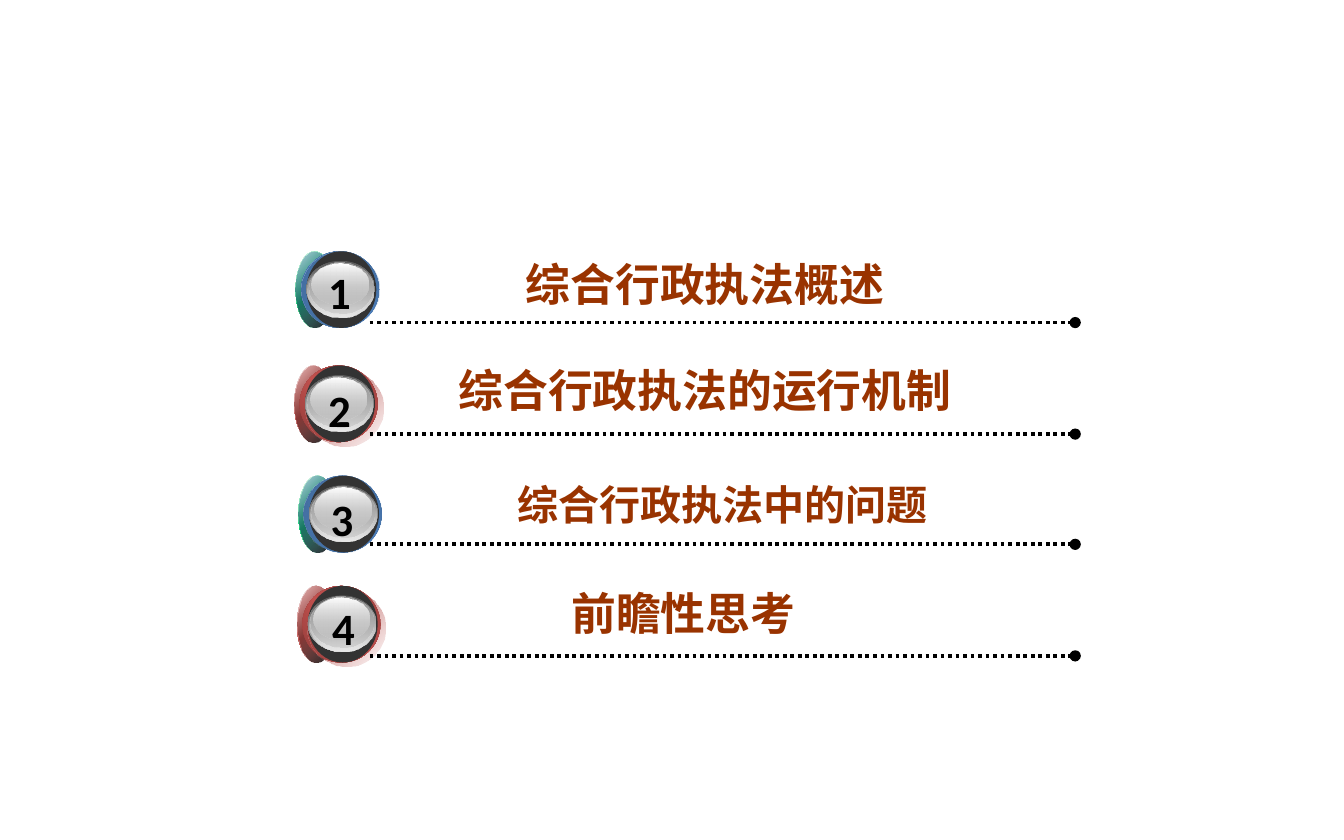
from dataclasses import dataclass

from lxml import etree
from pptx import Presentation
from pptx.dml.color import RGBColor
from pptx.enum.dml import MSO_LINE
from pptx.enum.shapes import MSO_CONNECTOR, MSO_SHAPE
from pptx.enum.text import MSO_AUTO_SIZE, PP_ALIGN
from pptx.oxml.ns import qn
from pptx.util import Inches, Pt

OVAL = MSO_SHAPE.OVAL
STRAIGHT = MSO_CONNECTOR.STRAIGHT
DOTTED = MSO_LINE.ROUND_DOT
CENTER = PP_ALIGN.CENTER
FIT_SHAPE = MSO_AUTO_SIZE.SHAPE_TO_FIT_TEXT


@dataclass(frozen=True)
class Accent:
    glow: str
    base: str
    rim: str
    halo: str
    halo_shift: tuple


@dataclass(frozen=True)
class Theme:
    heading_font: str = "Noto Sans CJK SC"
    number_font: str = "Calibri"
    heading: str = "993300"
    ink: str = "000000"
    white: str = "FFFFFF"
    ring: str = "333333"
    shade: str = "595959"
    mid: str = "989898"
    silver: str = "C0C0C0"
    light: str = "E9E9E9"
    size: int = 24
    small_size: int = 22
    line_width: int = 2
    cool: Accent = Accent("00CC66", "4F81BD", "3C6391", "416A9B", (0.04, 0))
    warm: Accent = Accent("C0504D", "C0504D", "933D3B", "9E423F", (0.08, 0.03))


class AgendaSlide:
    def __init__(self, slide, theme):
        self.s = slide
        self.theme = theme

    def oval(self, shapes, left, top, width, height, stops, angle=90):
        sp = shapes.add_shape(OVAL, Inches(left), Inches(top), Inches(width), Inches(height))
        sp.shadow.inherit = False
        sp.line.fill.background()
        if isinstance(stops, str):
            sp.fill.solid()
            sp.fill.fore_color.rgb = RGBColor.from_string(stops)
            return
        grad = etree.Element(qn("a:gradFill"), rotWithShape="1")
        stop_list = etree.SubElement(grad, qn("a:gsLst"))
        for position, color, opacity in stops:
            stop = etree.SubElement(stop_list, qn("a:gs"), pos=str(position * 1000))
            rgb = etree.SubElement(stop, qn("a:srgbClr"), val=color)
            if opacity < 100:
                etree.SubElement(rgb, qn("a:alpha"), val=str(opacity * 1000))
        etree.SubElement(grad, qn("a:lin"), ang=str(angle * 60000), scaled="1")
        sp._element.spPr.find(qn("a:prstGeom")).addnext(grad)

    def text(self, shapes, left, top, width, height, content, font, size, color):
        sp = shapes.add_textbox(Inches(left), Inches(top), Inches(width), Inches(height))
        tf = sp.text_frame
        tf.word_wrap = False
        tf.auto_size = FIT_SHAPE
        p = tf.paragraphs[0]
        p.text = content
        p.alignment = CENTER
        p.font.name = font
        p.font.size = Pt(size)
        p.font.bold = True
        p.font.color.rgb = RGBColor.from_string(color)
        latin = p._p.pPr.find(qn("a:defRPr")).find(qn("a:latin"))
        latin.addnext(etree.Element(qn("a:ea"), typeface=font))

    def rule(self, shapes, left, right, y):
        line = shapes.add_connector(STRAIGHT, Inches(left), Inches(y), Inches(right), Inches(y))
        line.line.color.rgb = RGBColor.from_string(self.theme.ink)
        line.line.width = Pt(self.theme.line_width)
        line.line.dash_style = DOTTED
        sp_pr = line._element.spPr
        etree.SubElement(sp_pr.find(qn("a:ln")), qn("a:tailEnd"), type="oval")
        etree.SubElement(sp_pr, qn("a:effectLst"))

    def badge(self, shapes, left, top, accent):
        t = self.theme
        halo_x, halo_y = accent.halo_shift
        layers = [
            (0, 0, 0.28, 0.57, [(0, t.white, 100), (50, accent.glow, 100), (100, t.white, 100)], 45),
            (0, 0, 0.28, 0.57, [(0, accent.base, 32), (100, t.ink, 90)], 45),
            (0.04, 0, 0.58, 0.57, [(0, accent.rim, 100), (50, accent.base, 100), (100, accent.rim, 100)], 315),
            (halo_x, halo_y, 0.58, 0.57, [(0, accent.halo, 100), (100, accent.base, 0)], 45),
            (0.08, 0, 0.52, 0.57, t.ring),
            (0.08, 0.07, 0.51, 0.42, [(0, t.shade, 100), (100, t.silver, 100)]),
            (0.09, 0.08, 0.49, 0.41, [(0, t.silver, 0), (100, t.light, 100)]),
            (0.1, 0.08, 0.47, 0.38, [(0, t.mid, 100), (100, t.silver, 48)]),
            (0.12, 0.09, 0.42, 0.31, [(0, t.white, 100), (100, t.silver, 38)]),
        ]
        for dx, dy, *rest in layers:
            self.oval(shapes, left + dx, top + dy, *rest)

    def item(self, number, heading, size, accent, badge_at, number_at, heading_box, rule_y):
        t = self.theme
        shapes = self.s.shapes.add_group_shape().shapes
        self.badge(shapes, *badge_at, accent)
        self.rule(shapes, 2.75, 8, rule_y)
        self.text(shapes, *number_at, 0.37, 0.5, str(number), t.number_font, t.size, t.ink)
        self.text(shapes, *heading_box, heading, t.heading_font, size, t.heading)


def main():
    prs = Presentation()
    prs.slide_width = Inches(10)
    prs.slide_height = Inches(6.25)
    theme = Theme()
    agenda = AgendaSlide(prs.slides.add_slide(prs.slide_layouts[6]), theme)
    items = [
        ("综合行政执法概述", theme.size, theme.cool,
         (2.2, 1.87), (2.34, 1.92), (3.64, 1.86, 3.21, 0.5), 2.4),
        ("综合行政执法的运行机制", theme.size, theme.warm,
         (2.19, 2.72), (2.34, 2.8), (3.2, 2.65, 4.09, 0.5), 3.23),
        ("综合行政执法中的问题", theme.small_size, theme.cool,
         (2.22, 3.54), (2.36, 3.61), (3.74, 3.52, 3.27, 0.47), 4.05),
        ("前瞻性思考", theme.size, theme.warm,
         (2.21, 4.36), (2.37, 4.42), (3.97, 4.31, 2.23, 0.5), 4.88),
    ]
    for number, item in enumerate(items, 1):
        agenda.item(number, *item)
    prs.save("out.pptx")


if __name__ == "__main__":
    main()
